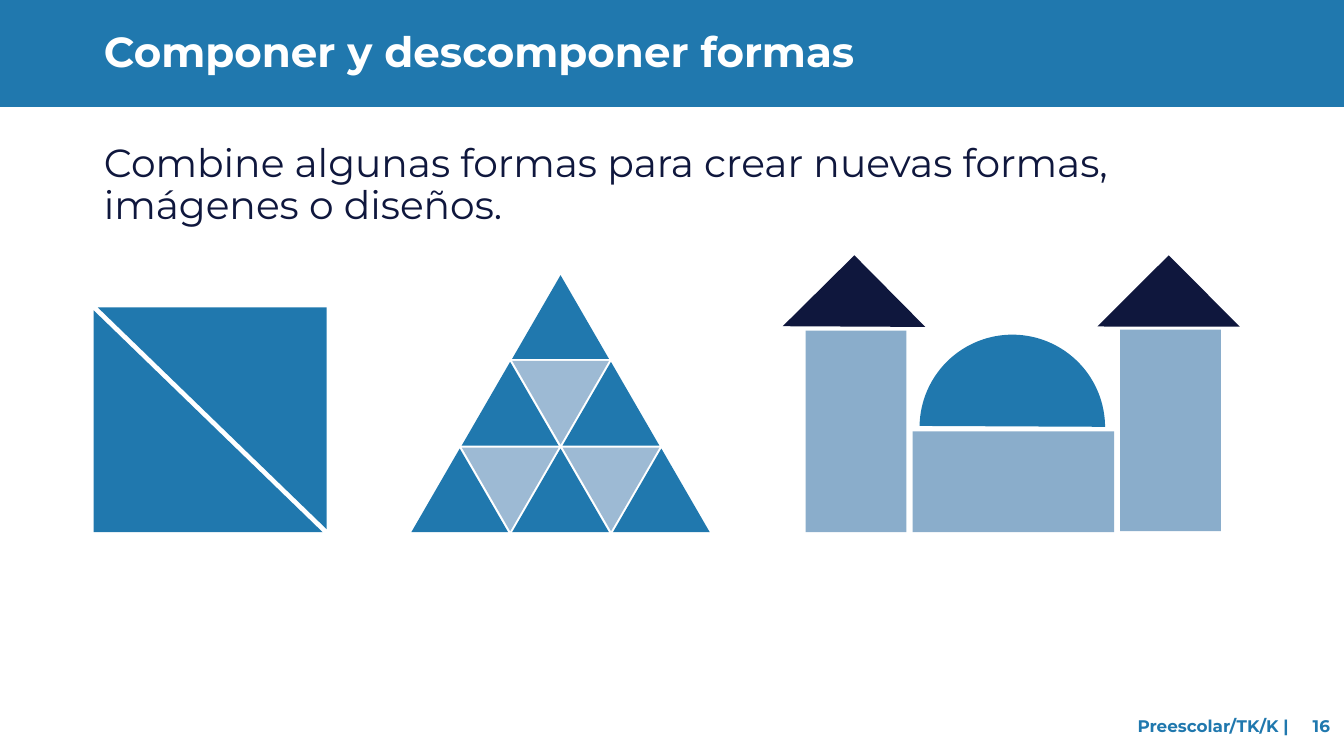
from dataclasses import dataclass

from lxml import etree
from pptx import Presentation
from pptx.dml.color import RGBColor
from pptx.enum.shapes import MSO_SHAPE
from pptx.enum.text import MSO_ANCHOR, MSO_AUTO_SIZE, PP_ALIGN
from pptx.oxml.ns import qn
from pptx.util import Inches, Pt

RECTANGLE = MSO_SHAPE.RECTANGLE
TRIANGLE = MSO_SHAPE.ISOSCELES_TRIANGLE
RIGHT_TRIANGLE = MSO_SHAPE.RIGHT_TRIANGLE
CHORD = MSO_SHAPE.CHORD
TOP, MIDDLE = MSO_ANCHOR.TOP, MSO_ANCHOR.MIDDLE
LEFT, RIGHT = PP_ALIGN.LEFT, PP_ALIGN.RIGHT
NO_AUTO_SIZE = MSO_AUTO_SIZE.NONE

FONT = "Montserrat"
BLUE, NAVY, WHITE = "2078AE", "0F173D", "FFFFFF"
PALE_BLUE, STONE_BLUE = "9DBAD4", "8AADCB"


@dataclass
class Block:
    kind: MSO_SHAPE
    left: float
    top: float
    width: float
    height: float
    color: str
    rotation: float = 0
    adjustments: tuple[float, ...] = ()


@dataclass
class TextStyle:
    size: float
    color: str
    bold: bool = False
    align: PP_ALIGN = LEFT
    anchor: MSO_ANCHOR = TOP
    line_spacing: float = 1.0
    space_after: float = 0


def rgb(color: str) -> RGBColor:
    return RGBColor.from_string(color)


def draw_block(slide, block: Block):
    shape = slide.shapes.add_shape(
        block.kind, Inches(block.left), Inches(block.top),
        Inches(block.width), Inches(block.height))
    shape.shadow.inherit = False
    shape.fill.solid()
    shape.fill.fore_color.rgb = rgb(block.color)
    shape.line.fill.background()
    shape.rotation = block.rotation
    for index, value in enumerate(block.adjustments):
        shape.adjustments[index] = value
    return shape


def place(shape, left: float, top: float, width: float, height: float) -> None:
    shape.left, shape.top = Inches(left), Inches(top)
    shape.width, shape.height = Inches(width), Inches(height)


def write(shape, text: str, style: TextStyle) -> None:
    frame = shape.text_frame
    frame.text = text
    frame.word_wrap = True
    frame.auto_size = NO_AUTO_SIZE
    frame.vertical_anchor = style.anchor
    paragraph = frame.paragraphs[0]
    paragraph.alignment = style.align
    paragraph.line_spacing = style.line_spacing
    paragraph.space_before = Pt(0)
    paragraph.space_after = Pt(style.space_after)
    for run in paragraph.runs:
        run.font.name = FONT
        run.font.size = Pt(style.size)
        run.font.bold = style.bold
        run.font.color.rgb = rgb(style.color)


def remove_bullet(paragraph) -> None:
    properties = paragraph._p.get_or_add_pPr()
    properties.set("marL", "0")
    properties.set("indent", "0")
    etree.SubElement(properties, qn("a:buNone"))


def split_square() -> list[Block]:
    return [
        Block(TRIANGLE, 0.93, 3.08, 2.27, 2.2, BLUE, 0, (0,)),
        Block(TRIANGLE, 0.97, 3.05, 2.27, 2.2, BLUE, 180, (0,)),
    ]


def pyramid(rows: int = 3) -> list[Block]:
    apex_left, apex_top, width, height = 5.08, 2.73, 0.96, 0.83
    column_step, row_step = 1.0, 0.86
    upright, inverted = [], []
    for row in range(rows):
        row_left = apex_left - row * column_step / 2
        row_top = apex_top + row * row_step
        for column in range(row + 1):
            left = row_left + column * column_step
            upright.append(Block(TRIANGLE, left, row_top, width, height, BLUE))
            if column < row:
                inverted.append(Block(
                    TRIANGLE, left + column_step / 2, row_top - 0.01,
                    width, height, PALE_BLUE, 180))
    return upright + inverted


def castle() -> list[Block]:
    return [
        Block(RECTANGLE, 7.99, 3.28, 1, 2, STONE_BLUE),
        Block(RECTANGLE, 9.55, 3.78, 1, 2, STONE_BLUE, 90),
        Block(RECTANGLE, 11.11, 3.27, 1, 2, STONE_BLUE),
        Block(CHORD, 9.12, 3.32, 1.84, 1.84, BLUE, 135.9, (27, 134.24)),
        Block(RIGHT_TRIANGLE, 7.97, 2.74, 1, 1, NAVY, 135.3),
        Block(RIGHT_TRIANGLE, 11.09, 2.74, 1, 1, NAVY, 135.1),
    ]


def main() -> None:
    presentation = Presentation()
    presentation.slide_width = Inches(13.33)
    presentation.slide_height = Inches(7.5)
    slide = presentation.slides.add_slide(presentation.slide_layouts[1])

    # Header band, behind the title
    band = draw_block(slide, Block(RECTANGLE, 0, 0, 13.33, 1.06, BLUE))
    slide.shapes._spTree.insert(2, band._element)

    # Title and instruction
    title, body = slide.shapes.title, slide.placeholders[1]
    place(title, 0.93, 0.26, 11.85, 0.56)
    write(title, "Componer y descomponer formas",
          TextStyle(30, WHITE, bold=True, line_spacing=0.9))
    place(body, 0.93, 1.37, 11.85, 1.07)
    write(body, "Combine algunas formas para crear nuevas formas, "
          "imágenes o diseños.",
          TextStyle(28, NAVY, line_spacing=0.9, space_after=24))
    remove_bullet(body.text_frame.paragraphs[0])

    # Composed figures
    for block in split_square() + pyramid() + castle():
        draw_block(slide, block)

    # Footer: grade level and page number
    footer_style = TextStyle(12, BLUE, bold=True, align=RIGHT, anchor=MIDDLE)
    for text, left, width in (("Preescolar/TK/K |", 9.48, 3.4),
                              ("16", 12.79, 0.5)):
        box = slide.shapes.add_textbox(
            Inches(left), Inches(7), Inches(width), Inches(0.4))
        write(box, text, footer_style)

    presentation.save("out.pptx")


if __name__ == "__main__":
    main()
